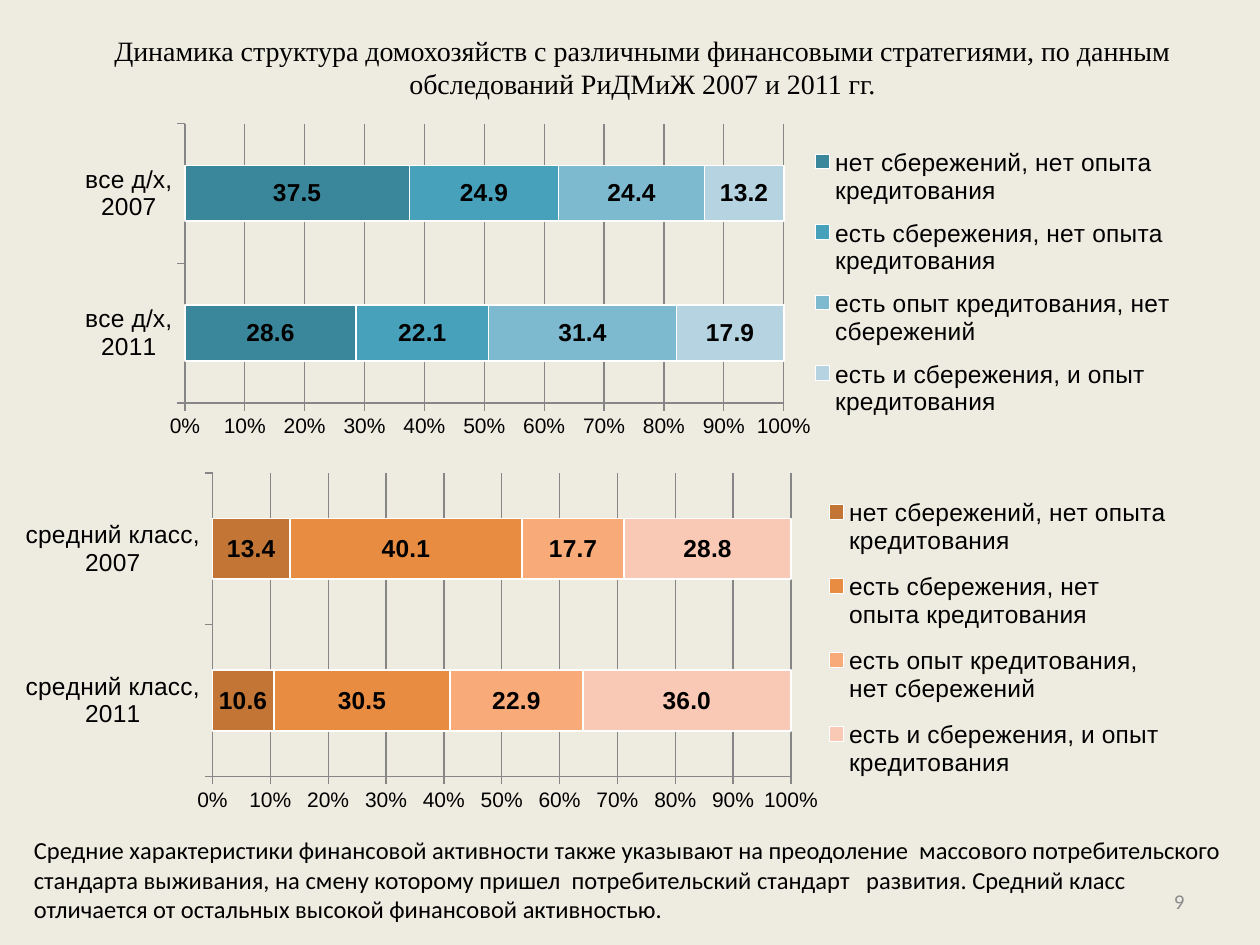
from dataclasses import dataclass

from lxml import etree
from pptx import Presentation
from pptx.chart.data import CategoryChartData
from pptx.dml.color import RGBColor
from pptx.enum.chart import XL_CHART_TYPE, XL_LEGEND_POSITION, XL_TICK_MARK
from pptx.enum.text import MSO_ANCHOR, PP_ALIGN
from pptx.oxml.ns import qn
from pptx.util import Pt

STACKED = XL_CHART_TYPE.BAR_STACKED_100
LEGEND_RIGHT = XL_LEGEND_POSITION.RIGHT
TICK_OUTSIDE = XL_TICK_MARK.OUTSIDE
LEFT, CENTER, RIGHT = PP_ALIGN.LEFT, PP_ALIGN.CENTER, PP_ALIGN.RIGHT
TOP, MIDDLE = MSO_ANCHOR.TOP, MSO_ANCHOR.MIDDLE

PX = 9144  # EMU in one px, 100 px to the inch


@dataclass(frozen=True)
class Theme:
    background: str = "EEECE1"
    text: str = "000000"
    muted: str = "8C8C8C"
    line: str = "868686"
    bar_border: str = "FFFFFF"
    teals: tuple = ("3A879C", "47A1BA", "7DB9CF", "B5D3E0")
    oranges: tuple = ("C27535", "E88C41", "F8AA79", "FAC9B5")
    title_font: str = "Times New Roman"
    chart_font: str = "Arial"
    body_font: str = "Calibri"
    title_size: int = 16
    body_size: int = 14
    small_size: int = 12


THEME = Theme()

STRATEGIES = (
    "нет сбережений, нет опыта кредитования",
    "есть сбережения, нет опыта кредитования",
    "есть опыт кредитования, нет сбережений",
    "есть и сбережения, и опыт кредитования",
)
TITLE = ("Динамика структура домохозяйств с различными финансовыми стратегиями, "
         "по данным обследований РиДМиЖ 2007 и 2011 гг.")
CONCLUSION = ("Средние характеристики финансовой активности также указывают на преодоление  "
              "массового потребительского стандарта выживания, на смену которому пришел  "
              "потребительский стандарт   развития. Средний класс отличается от остальных "
              "высокой финансовой активностью.")


def emu(box):
    return [length * PX for length in box]


def style_font(font, name, size, color=THEME.text, bold=False):
    font.name = name
    font.size = Pt(size)
    font.bold = bold
    font.color.rgb = RGBColor.from_string(color)


def style_line(line, color, width):
    line.color.rgb = RGBColor.from_string(color)
    line.width = Pt(width)


def add_text(slide, box, text, font_name, size, color=THEME.text,
             alignment=LEFT, anchor=TOP):
    frame = slide.shapes.add_textbox(*emu(box)).text_frame
    frame.word_wrap = True
    frame.vertical_anchor = anchor
    paragraph = frame.paragraphs[0]
    paragraph.text = text
    paragraph.alignment = alignment
    style_font(paragraph.font, font_name, size, color)


def manual_layout(fractions, inner=False):
    """Build a chart layout from x, y, width and height as fractions of the chart."""
    layout = etree.Element(qn("c:layout"))
    manual = etree.SubElement(layout, qn("c:manualLayout"))
    settings = [("layoutTarget", "inner")] if inner else []
    settings += [("xMode", "edge"), ("yMode", "edge")]
    settings += zip("xywh", fractions)
    for tag, value in settings:
        etree.SubElement(manual, qn(f"c:{tag}")).set("val", str(value))
    return layout


def place_chart_parts(chart, plot_area, legend_area):
    plot = chart.element.find(".//" + qn("c:plotArea"))
    legend = chart.element.find(".//" + qn("c:legend"))
    for parent in (plot, legend):
        for layout in parent.findall(qn("c:layout")):
            parent.remove(layout)
    plot.insert(0, manual_layout(plot_area, inner=True))
    legend.find(qn("c:legendPos")).addnext(manual_layout(legend_area))


def style_axis(axis, size):
    axis.major_tick_mark = TICK_OUTSIDE
    axis.minor_tick_mark = XL_TICK_MARK.NONE
    style_line(axis.format.line, THEME.line, 0.75)
    style_font(axis.tick_labels.font, THEME.chart_font, size)


def add_strategy_chart(slide, box, categories, values, colors, plot_area, legend_area):
    data = CategoryChartData(number_format="###0.0")
    data.categories = categories
    for strategy, shares in zip(STRATEGIES, values):
        data.add_series(strategy, shares)
    chart = slide.shapes.add_chart(STACKED, *emu(box), data).chart
    chart.has_title = False
    style_font(chart.font, THEME.chart_font, THEME.body_size)

    # Axes
    style_axis(chart.category_axis, THEME.body_size)
    value_axis = chart.value_axis
    style_axis(value_axis, THEME.small_size)
    value_axis.minimum_scale, value_axis.maximum_scale = 0, 1
    value_axis.major_unit = 0.1
    value_axis.tick_labels.number_format = "0%"
    value_axis.tick_labels.number_format_is_linked = False
    value_axis.has_major_gridlines = True
    style_line(value_axis.major_gridlines.format.line, THEME.line, 0.75)

    # Bars and their values
    plot = chart.plots[0]
    plot.gap_width, plot.overlap = 150, 100
    plot.vary_by_categories = False
    for series, color in zip(plot.series, colors):
        series.format.fill.solid()
        series.format.fill.fore_color.rgb = RGBColor.from_string(color)
        style_line(series.format.line, THEME.bar_border, 1)
        labels = series.data_labels
        labels.show_value = True
        labels.number_format = "###0.0"
        labels.number_format_is_linked = False
        style_font(labels.font, THEME.chart_font, THEME.body_size, bold=True)

    # Legend
    chart.has_legend = True
    chart.legend.position = LEGEND_RIGHT
    chart.legend.include_in_layout = False
    style_font(chart.legend.font, THEME.chart_font, THEME.body_size)
    place_chart_parts(chart, plot_area, legend_area)


def build_slide(presentation):
    slide = presentation.slides.add_slide(presentation.slide_layouts[6])
    slide.background.fill.solid()
    slide.background.fill.fore_color.rgb = RGBColor.from_string(THEME.background)

    # Title
    add_text(slide, (22, 6, 976, 94), TITLE, THEME.title_font, THEME.title_size,
             alignment=CENTER, anchor=MIDDLE)

    # Middle class
    add_strategy_chart(
        slide, (0, 351, 937, 305),
        ("средний класс, 2011", "средний класс, 2007"),
        ((10.6, 13.4), (30.5, 40.1), (22.9, 17.7), (36.0, 28.8)),
        THEME.oranges, (0.18, 0.08, 0.49, 0.79), (0.7, 0.1, 0.29, 0.82))

    # All households
    add_strategy_chart(
        slide, (28, 84, 914, 281),
        ("все д/х, 2011", "все д/х, 2007"),
        ((28.6, 37.5), (22.1, 24.9), (31.4, 24.4), (17.9, 13.2)),
        THEME.teals, (0.13, 0.05, 0.52, 0.79), (0.68, 0.08, 0.31, 0.84))

    # Page number and conclusion
    add_text(slide, (717, 695, 233, 40), "9", THEME.body_font, THEME.small_size,
             THEME.muted, RIGHT, MIDDLE)
    add_text(slide, (17, 658, 972, 81), CONCLUSION, THEME.body_font, THEME.body_size)


def main():
    presentation = Presentation()
    presentation.slide_width, presentation.slide_height = emu((1000, 750))
    build_slide(presentation)
    presentation.save("out.pptx")


if __name__ == "__main__":
    main()
